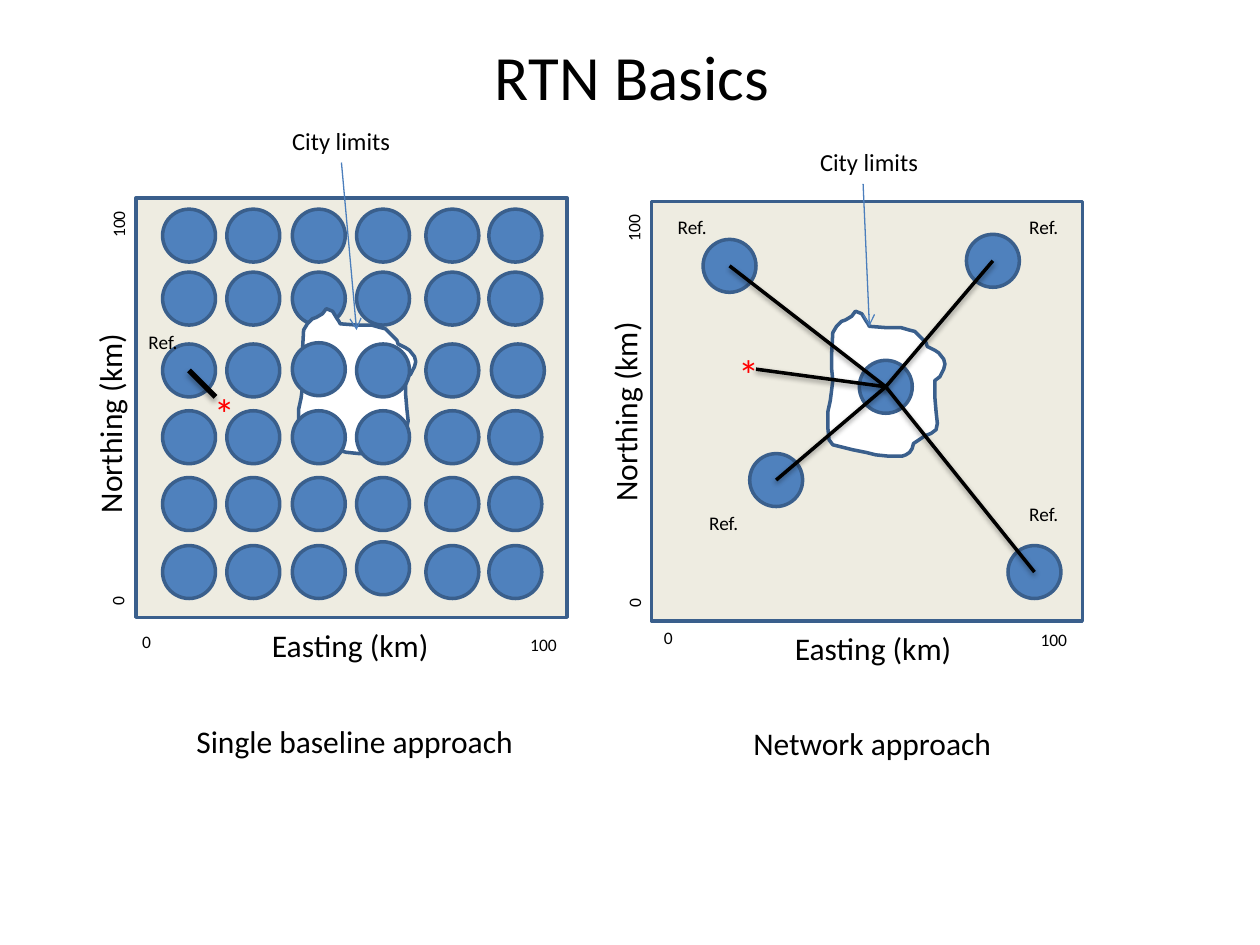
from lxml.etree import SubElement
from pptx import Presentation
from pptx.dml.color import RGBColor
from pptx.enum.shapes import MSO_CONNECTOR, MSO_SHAPE
from pptx.enum.text import MSO_AUTO_SIZE
from pptx.oxml.ns import qn
from pptx.util import Pt

EMU_PER_PX = 9144
FONT = "Calibri"
COLORS = {
    "land": "EEECE1",
    "station": "4F81BD",
    "outline": "3A5F8C",
    "pointer": "4B7EBC",
    "city": "FFFFFF",
    "text": "000000",
    "rover": "FF0000",
}

DOT = 42
DOT_COLUMNS = [129, 180, 232, 283, 338, 388]
DOT_ROWS = [166, 216, 273, 326, 379, 433]
DOT_NUDGES = {(388, 273): (2, 0), (283, 433): (0, -3), (232, 273): (0, -1)}
ROWS_UNDER_CITY = 2

CITY_OUTLINE = [
    (270, 257), (283, 258), (295, 258), (302, 260), (306, 261), (311, 266),
    (315, 270), (316, 273), (322, 276), (325, 278), (329, 283), (330, 287),
    (329, 291), (326, 297), (322, 300), (322, 313), (323, 325), (324, 334),
    (323, 339), (319, 342), (314, 344), (308, 348), (305, 350), (304, 354),
    (302, 357), (299, 359), (296, 360), (285, 360), (275, 359), (267, 357),
    (257, 355), (249, 353), (241, 351), (238, 347), (237, 337), (237, 325),
    (239, 316), (240, 308), (241, 300), (240, 290), (240, 280), (241, 262),
    (244, 257), (248, 253), (251, 252), (256, 249), (259, 245), (264, 247),
    (267, 252), (269, 255),
]
NETWORK_CITY_SHIFT = (420, 2)

HUB = (703, 307)
REFERENCES = [(579, 211), (788, 207), (821, 454), (616, 381)]
NETWORK_ROVER = (600, 293)

TEXT_BOXES = {
    "RTN Basics": (36, 240, 71, [(383, 25, 0)]),
    "City limits": (14, 99, 34, [(222, 95, 0), (641, 112, 0)]),
    "Northing (km)": (18, 164, 40, [(5, 315, 270), (414, 306, 270)]),
    "Easting (km)": (18, 146, 40, [(206, 492, 0), (621, 494, 0)]),
    "Single baseline approach": (18, 275, 40, [(146, 568, 0)]),
    "Network approach": (18, 211, 40, [(588, 570, 0)]),
    "Ref.": (11, 45, 29, [(108, 257, 0), (553, 401, 0), (528, 166, 0),
                          (807, 166, 0), (807, 394, 0)]),
    "0": (10, 27, 27, [(103, 496, 0), (80, 463, 270),
                       (517, 493, 0), (490, 465, 270)]),
    "100": (10, 42, 27, [(411, 498, 0), (73, 164, 270),
                         (816, 494, 0), (482, 167, 270)]),
}


def px(value):
    return round(value * EMU_PER_PX)


def rgb(name):
    return RGBColor.from_string(COLORS[name])


def write_text(frame, text, size, color="text"):
    paragraph = frame.paragraphs[0]
    paragraph.text = text
    font = paragraph.runs[0].font
    font.name = FONT
    font.size = Pt(size)
    font.color.rgb = rgb(color)


class Diagram:
    def __init__(self, slide, outline="outline", outline_width=2):
        self.slide = slide
        self.outline = outline
        self.outline_width = outline_width

    def style(self, shape, fill):
        shape.shadow.inherit = False
        shape.fill.solid()
        shape.fill.fore_color.rgb = rgb(fill)
        shape.line.color.rgb = rgb(self.outline)
        shape.line.width = Pt(self.outline_width)

    def shape(self, kind, left, top, width, height, fill):
        shape = self.slide.shapes.add_shape(
            kind, px(left), px(top), px(width), px(height))
        self.style(shape, fill)

    def frame(self, left, top):
        self.shape(MSO_SHAPE.RECTANGLE, left, top, 342, 333, "land")

    def station(self, left, top):
        self.shape(MSO_SHAPE.OVAL, left, top, DOT, DOT, "station")

    def station_rows(self, rows):
        for top in rows:
            for left in DOT_COLUMNS:
                right, down = DOT_NUDGES.get((left, top), (0, 0))
                self.station(left + right, top + down)

    def city(self, shift=(0, 0)):
        points = [(x + shift[0], y + shift[1]) for x, y in CITY_OUTLINE]
        builder = self.slide.shapes.build_freeform(*points[0], scale=EMU_PER_PX)
        builder.add_line_segments(points[1:], close=True)
        self.style(builder.convert_to_shape(), "city")

    def text(self, text, left, top, width, height, size, color="text", rotation=0):
        box = self.slide.shapes.add_textbox(
            px(left), px(top), px(width), px(height))
        box.rotation = rotation
        box.text_frame.word_wrap = False
        box.text_frame.auto_size = MSO_AUTO_SIZE.SHAPE_TO_FIT_TEXT
        write_text(box.text_frame, text, size=size, color=color)

    def rover(self, left, top):
        self.text("*", left, top, 37, 51, size=24, color="rover")

    def line(self, start, end, color, width):
        connector = self.slide.shapes.add_connector(
            MSO_CONNECTOR.STRAIGHT, *map(px, start + end))
        connector.line.color.rgb = rgb(color)
        connector.line.width = Pt(width)
        effects = SubElement(connector._element.spPr, qn("a:effectLst"))
        return connector, effects

    def pointer(self, start, end):
        connector, _ = self.line(start, end, "pointer", 0.75)
        SubElement(connector.line._get_or_add_ln(), qn("a:tailEnd"), type="arrow")

    def baseline(self, start, end, width=2, distance=1.6, opacity=38):
        _, effects = self.line(start, end, "text", width)
        shadow = SubElement(
            effects, qn("a:outerShdw"), blurRad=str(Pt(3.1)),
            dist=str(Pt(distance)), dir="5400000", rotWithShape="0")
        color = SubElement(shadow, qn("a:srgbClr"), val=COLORS["text"])
        SubElement(color, qn("a:alpha"), val=str(opacity * 1000))


def draw_single_baseline(diagram):
    diagram.frame(108, 157)
    diagram.station_rows(DOT_ROWS[:ROWS_UNDER_CITY])
    diagram.city()
    diagram.station_rows(DOT_ROWS[ROWS_UNDER_CITY:])
    diagram.pointer((271, 129), (283, 262))
    diagram.rover(160, 303)
    diagram.baseline((150, 294), (171, 315), width=3, distance=1.8, opacity=35)


def draw_network(diagram):
    diagram.frame(517, 160)
    diagram.city(NETWORK_CITY_SHIFT)
    for x, y in REFERENCES + [HUB]:
        diagram.station(x - DOT // 2, y - DOT // 2)
    diagram.rover(576, 272)
    for point in REFERENCES + [NETWORK_ROVER]:
        diagram.baseline(point, HUB)
    diagram.pointer((685, 146), (690, 259))


def main():
    presentation = Presentation()
    presentation.slide_width = px(1000)
    presentation.slide_height = px(750)
    diagram = Diagram(presentation.slides.add_slide(presentation.slide_layouts[6]))
    draw_single_baseline(diagram)
    draw_network(diagram)
    for text, (size, width, height, places) in TEXT_BOXES.items():
        for left, top, rotation in places:
            diagram.text(text, left, top, width, height, size, rotation=rotation)
    presentation.save("out.pptx")


if __name__ == "__main__":
    main()
